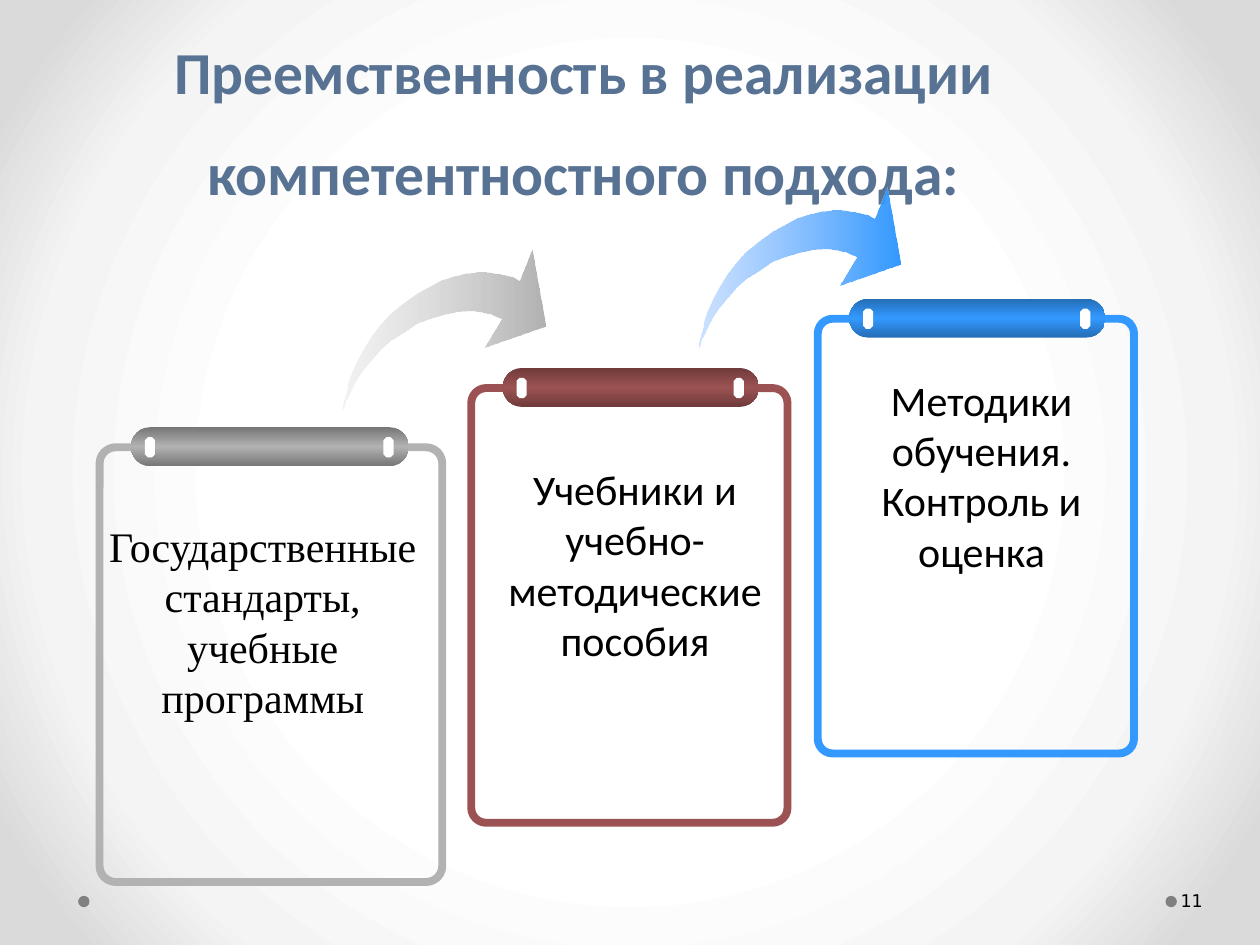
from lxml import etree
from pptx import Presentation
from pptx.dml.color import RGBColor
from pptx.enum import shapes, text
from pptx.oxml.ns import qn
from pptx.util import Inches, Pt

A = "http://schemas.openxmlformats.org/drawingml/2006/main"
SHAPE = shapes.MSO_SHAPE

# Curved arrow outline, in inches from the corner of its box
ARROW = [
    (0, 1.27), (0.01, 1.24), (0.02, 1.2), (0.05, 1.15), (0.08, 1.08), (0.12, 1.01),
    (0.17, 0.94), (0.23, 0.87), (0.3, 0.79), (0.38, 0.72), (0.48, 0.66), (0.58, 0.59),
    (0.69, 0.55), (0.79, 0.52), (0.88, 0.5), (0.97, 0.49), (1.04, 0.49), (1.1, 0.5),
    (1.16, 0.51), (1.2, 0.53), (1.25, 0.55), (1.11, 0.78), (1.6, 0.61), (1.49, 0),
    (1.39, 0.25), (1.34, 0.22), (1.3, 0.21), (1.25, 0.2), (1.19, 0.19), (1.13, 0.18),
    (1.05, 0.18), (0.97, 0.19), (0.88, 0.21), (0.78, 0.24), (0.69, 0.29), (0.58, 0.35),
    (0.47, 0.43), (0.37, 0.51), (0.29, 0.6), (0.22, 0.69), (0.16, 0.79), (0.11, 0.88),
    (0.07, 0.97), (0.04, 1.05), (0.03, 1.12), (0.01, 1.18), (0, 1.23),
]


def rgb(color):
    return RGBColor.from_string(color)


def set_gradient(element, stops, angle=None):
    """Swap the solid fill in element for a gradient; circular if no angle."""
    solid = next(element.iter(qn("a:solidFill")))
    grad = etree.Element(qn("a:gradFill"), rotWithShape="1")
    stop_list = etree.SubElement(grad, qn("a:gsLst"))
    for pos, color, alpha in stops:
        gs = etree.SubElement(stop_list, qn("a:gs"), pos=str(pos * 1000))
        clr = etree.SubElement(gs, qn("a:srgbClr"), val=color)
        if alpha < 100:
            etree.SubElement(clr, qn("a:alpha"), val=str(alpha * 1000))
    if angle is None:
        circle = etree.SubElement(grad, qn("a:path"), {"path": "circle"})
        etree.SubElement(circle, qn("a:fillToRect"), dict.fromkeys("ltrb", "50000"))
    else:
        etree.SubElement(grad, qn("a:lin"), ang=str(angle * 60000), scaled="0")
    solid.getparent().replace(solid, grad)


def add_shape(s, kind, x, y, w, h, fill=None, line=None, adj=None):
    sp = s.shapes.add_shape(kind, Inches(x), Inches(y), Inches(w), Inches(h))
    sp.shadow.inherit = False
    if adj is not None:
        sp.adjustments[0] = adj
    if fill:
        sp.fill.solid()
        sp.fill.fore_color.rgb = rgb(fill)
    else:
        sp.fill.background()
    if line:
        sp.line.color.rgb = rgb(line)
        sp.line.width = Pt(4.5)
    else:
        sp.line.fill.background()
    return sp


def format_paragraph(p, font, size, color, align, bold=False):
    p.alignment = align
    for r in p.runs:
        r.font.name, r.font.size, r.font.bold = font, Pt(size), bold
        r.font.color.rgb = rgb(color)


def add_text(s, x, y, w, h, lines, font, size, align):
    sp = s.shapes.add_textbox(Inches(x), Inches(y), Inches(w), Inches(h))
    tf = sp.text_frame
    tf.word_wrap = True
    tf.text = "\n".join(lines)
    for p in tf.paragraphs:
        format_paragraph(p, font, size, "000000", align)
    return tf


def add_title(s, x, y, w, h, title):
    sp = s.shapes.title
    sp.left, sp.top, sp.width, sp.height = map(Inches, (x, y, w, h))
    tf = sp.text_frame
    tf.text = title
    tf.word_wrap = True
    tf.auto_size = text.MSO_AUTO_SIZE.NONE
    tf.vertical_anchor = text.MSO_ANCHOR.BOTTOM
    p = tf.paragraphs[0]
    p.line_spacing = Pt(58)
    format_paragraph(p, "Calibri", 34, "577293", text.PP_ALIGN.CENTER, bold=True)


def add_clipboard(s, x, y, w, h, color, edge):
    # Sheet
    add_shape(s, SHAPE.ROUNDED_RECTANGLE, x, y, w, h, line=color, adj=0.047)
    # Clip bar
    bar_x, bar_y, bar_w = x + 0.25, y - 0.16, w * 0.81
    bar = add_shape(s, SHAPE.ROUNDED_RECTANGLE, bar_x, bar_y, bar_w, 0.31, color, adj=0.5)
    set_gradient(bar._element.spPr, [(0, edge, 100), (50, color, 100), (100, edge, 100)], 90)
    # Holes at both ends of the bar
    for hole_x in (bar_x + 0.11, bar_x + bar_w - 0.2):
        add_shape(s, SHAPE.OCTAGON, hole_x, bar_y + 0.08, 0.08, 0.16, "FFFFFF", adj=0.293)


def add_arrow(s, x, y, start, end):
    points = [(Inches(x + dx), Inches(y + dy)) for dx, dy in ARROW]
    builder = s.shapes.build_freeform(*points[0])
    builder.add_line_segments(points[1:])
    sp = builder.convert_to_shape()
    sp.shadow.inherit = False
    sp.line.fill.background()
    sp.fill.solid()
    set_gradient(sp._element.spPr, [(0, start, 32), (100, end, 100)], 0)


def add_footer(s, y, number):
    for x in (0.62, 9.25):
        add_shape(s, SHAPE.OVAL, x, y, 0.09, 0.09, "808080")
    tf = add_text(s, 9.34, y - 0.16, 0.61, 0.4, [number], "DejaVu Sans", 10, text.PP_ALIGN.LEFT)
    tf.margin_left, tf.margin_right = Inches(0.03), Inches(0.05)
    tf.vertical_anchor = text.MSO_ANCHOR.MIDDLE


def main():
    prs = Presentation()
    prs.slide_width, prs.slide_height = Inches(10), Inches(7.5)
    s = prs.slides.add_slide(prs.slide_layouts[5])

    # Background
    s.background.fill.solid()
    set_gradient(s._element, [(50, "FFFFFF", 100), (76, "F4F4F4", 100), (92, "DADADA", 100)])

    add_footer(s, 7.11, "11")
    add_title(s, 0.5, 0.78, 8.26, 0.92,
              "Преемственность в реализации компетентностного подхода:")

    # Clipboards: box, colour, bar edge colour, text box, font, lines
    boards = [
        ((0.79, 3.55, 2.72, 3.45), "B2B2B2", "767676", (0.59, 4.08, 2.99, 1.72),
         "Times New Roman", ["Государственные стандарты, учебные программы"]),
        ((3.74, 3.08, 2.51, 3.45), "9C5252", "703B3B", (3.83, 3.63, 2.42, 1.72),
         "Calibri", ["Учебники и учебно-методические пособия"]),
        ((6.49, 2.53, 2.51, 3.45), "3399FF", "246DB6", (6.58, 2.92, 2.42, 1.72),
         "Calibri", ["Методики обучения.", "Контроль и оценка"]),
    ]
    for box, color, edge, text_box, font, lines in boards:
        add_clipboard(s, *box, color, edge)
        tf = add_text(s, *text_box, lines, font, 24, text.PP_ALIGN.CENTER)
        tf.auto_size = text.MSO_AUTO_SIZE.SHAPE_TO_FIT_TEXT

    # Arrows between the clipboards
    add_arrow(s, 2.73, 1.98, "D7D7D7", "B2B2B2")
    add_arrow(s, 5.55, 1.49, "63A6FF", "3399FF")

    prs.save("out.pptx")


if __name__ == "__main__":
    main()
